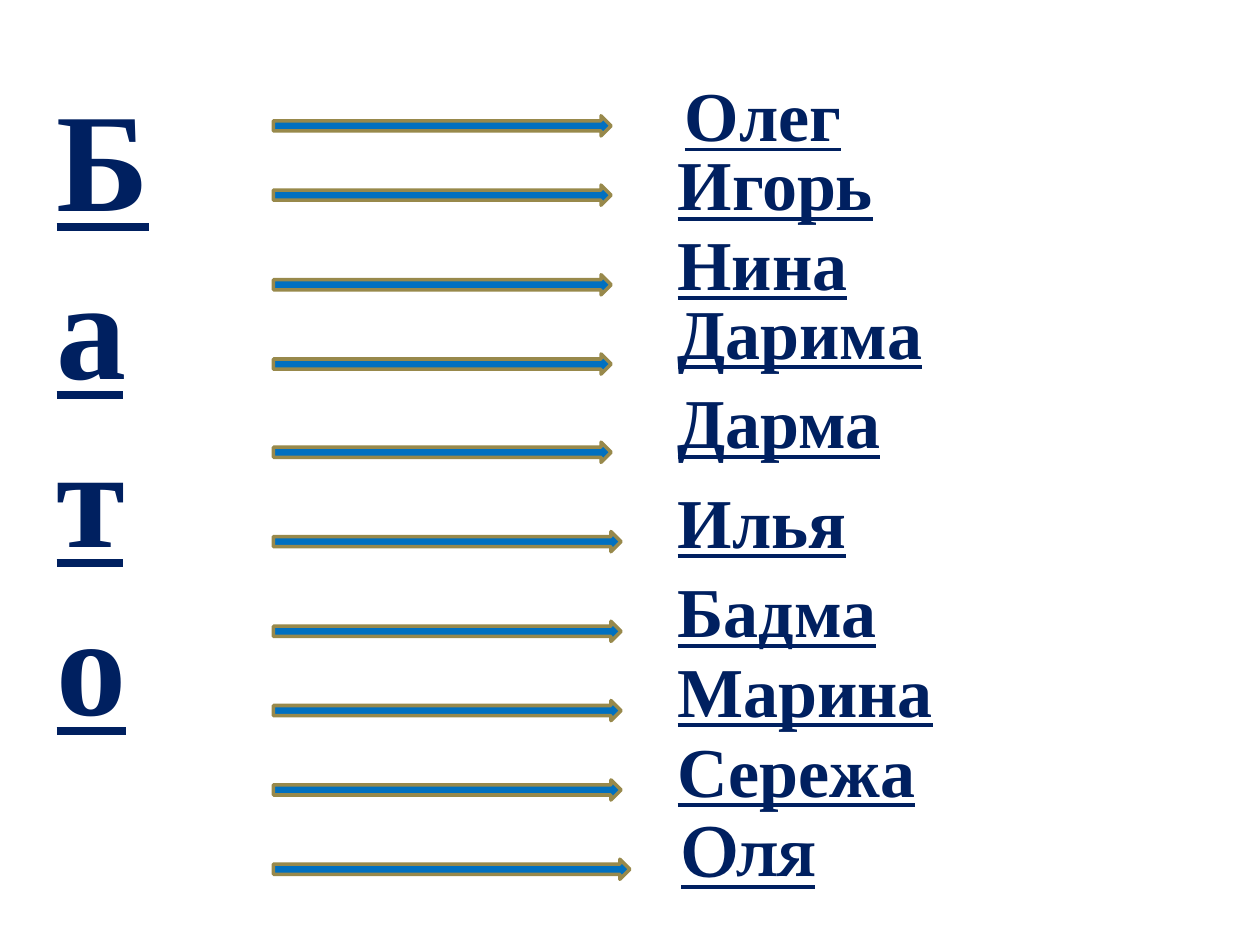
from pptx import Presentation
from pptx.dml.color import RGBColor
from pptx.enum.shapes import MSO_SHAPE as Shape
from pptx.enum.text import MSO_AUTO_SIZE as AutoSize
from pptx.util import Pt

NAVY, BLUE, OLIVE = "002060", "0070C0", "98894B"
SERIF, PAGELLA = "Times New Roman", "TeX Gyre Pagella"
INSET = 7.2
NAME_HEIGHT = 55.4
ARROW_LEFT, ARROW_HEIGHT = 156.2, 11.5
SHORT, MEDIUM, LONG = 193, 198.7, 203.8

# name, left, top, width, indent, font, arrow top, arrow length
ROWS = [
    ("Олег", 354.2, 37.5, 187, 30, SERIF, 66.2, SHORT),
    ("Игорь", 360, 77, 176, 20, SERIF, 105.8, SHORT),
    ("Нина", 360, 122.4, 221, 20, SERIF, 157, SHORT),
    ("Дарима", 360, 162, 181.5, 20, SERIF, 202.3, SHORT),
    ("Дарма", 360, 213, 176, 20, SERIF, 252.7, SHORT),
    ("Илья", 360, 270, 170, 20, SERIF, 303.8, MEDIUM),
    ("Бадма", 360, 321, 244, 20, SERIF, 355, MEDIUM),
    ("Марина", 360, 366.5, 199, 20, SERIF, 400.3, MEDIUM),
    ("Сережа", 360, 412, 244, 20, SERIF, 445.7, MEDIUM),
    ("Оля", 382.3, 457.2, 130, 0, PAGELLA, 491, LONG),
]


def color(hex_value):
    return RGBColor.from_string(hex_value)


def add_label(slide, text, left, top, width, height, size, font_name=SERIF, indent=0):
    """Add bold underlined text and return its frame."""
    frame = slide.shapes.add_textbox(Pt(left), Pt(top), Pt(width), Pt(height)).text_frame
    frame.word_wrap = True
    frame.auto_size = AutoSize.SHAPE_TO_FIT_TEXT
    frame.margin_left = Pt(INSET + indent)
    frame.text = text
    font = frame.paragraphs[0].runs[0].font
    font.name, font.size = font_name, Pt(size)
    font.bold = font.underline = True
    font.color.rgb = color(NAVY)
    return frame


def add_stacked_name(slide, text, left, top, width, height):
    frame = add_label(slide, text, left, top, width, height, 80)
    frame._txBody.bodyPr.set("vert", "wordArtVert")


def add_arrow(slide, left, top, length):
    arrow = slide.shapes.add_shape(
        Shape.RIGHT_ARROW, Pt(left), Pt(top), Pt(length), Pt(ARROW_HEIGHT))
    arrow.shadow.inherit = False
    arrow.fill.solid()
    arrow.fill.fore_color.rgb = color(BLUE)
    arrow.line.color.rgb = color(OLIVE)
    arrow.line.width = Pt(2)


def add_friends(slide, rows):
    for name, left, top, width, indent, font_name, arrow_top, length in rows:
        add_arrow(slide, ARROW_LEFT, arrow_top, length)
        add_label(slide, name, left, top, width, NAME_HEIGHT, 40, font_name, indent)


def main():
    deck = Presentation()
    deck.slide_width, deck.slide_height = Pt(720), Pt(540)
    slide = deck.slides.add_slide(deck.slide_layouts[6])
    add_stacked_name(slide, "Бато", 25.2, 37.5, 118.8, 485.3)
    add_friends(slide, ROWS)
    deck.save("out.pptx")


if __name__ == "__main__":
    main()
